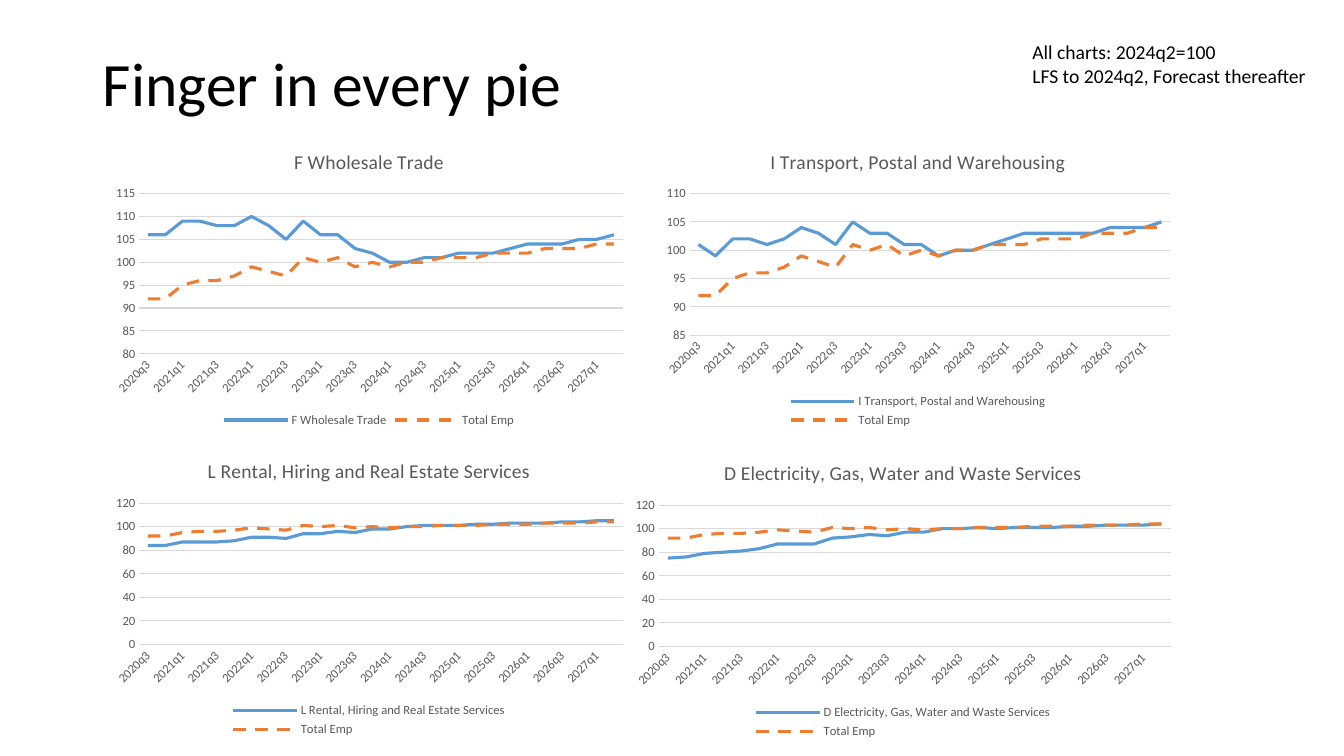
from dataclasses import dataclass

from pptx import Presentation
from pptx.chart.data import CategoryChartData
from pptx.dml.color import RGBColor as RGB
from pptx.enum.chart import XL_CHART_TYPE as ChartType
from pptx.enum.chart import XL_LEGEND_POSITION as LegendPosition
from pptx.enum.chart import XL_TICK_MARK as TickMark
from pptx.enum.dml import MSO_LINE_DASH_STYLE as Dash
from pptx.enum.text import MSO_ANCHOR as Anchor
from pptx.enum.text import PP_ALIGN as Align
from pptx.util import Inches, Pt


@dataclass(frozen=True)
class Theme:
    font: str = "Calibri"
    ink: RGB = RGB(0x00, 0x00, 0x00)
    label: RGB = RGB(0x59, 0x59, 0x59)
    grid: RGB = RGB(0xD9, 0xD9, 0xD9)
    industry: RGB = RGB(0x5B, 0x9B, 0xD5)
    total: RGB = RGB(0xED, 0x7D, 0x31)
    heading_size: Pt = Pt(44)
    note_size: Pt = Pt(14)
    chart_title_size: Pt = Pt(14)
    label_size: Pt = Pt(9)
    series_width: Pt = Pt(2.25)
    grid_width: Pt = Pt(0.75)


theme = Theme()


def set_font(font, size, color):
    font.name = theme.font
    font.size = size
    font.bold = False
    font.color.rgb = color


deck = Presentation()
deck.slide_width = Inches(13.33)
deck.slide_height = Inches(7.5)


def area(left, top, width, height):
    across, down = deck.slide_width / 100, deck.slide_height / 100
    return int(left * across), int(top * down), int(width * across), int(height * down)


slide = deck.slides.add_slide(deck.slide_layouts[5])

heading = slide.shapes.title
heading.left, heading.top, heading.width, heading.height = area(6.9, 5.33, 86.27, 12.27)
heading.text_frame.text = "Finger in every pie"
heading.text_frame.vertical_anchor = Anchor.MIDDLE
heading_line = heading.text_frame.paragraphs[0]
heading_line.alignment = Align.LEFT
heading_line.line_spacing = 0.9
set_font(heading_line.font, theme.heading_size, theme.ink)

note = slide.shapes.add_textbox(*area(76.07, 4.67, 23.63, 7.6)).text_frame
note.word_wrap = True
note.text = "All charts: 2024q2=100\nLFS to 2024q2, Forecast thereafter"
for note_line in note.paragraphs:
    set_font(note_line.font, theme.note_size, theme.ink)

quarters = [f"{2020 + n // 4}q{n % 4 + 1}" for n in range(2, 30)]
total_employment = [92, 92, 95, 96, 96, 97, 99, 98, 97, 101, 100, 101, 99, 100,
                    99, 100, 100, 101, 101, 101, 102, 102, 102, 103, 103, 103, 104, 104]

upper_row, lower_row, row_height = 17.6, 58.53, 39.47
left_column, left_width = 7.8, 39.31

industries = [
    ("D Electricity, Gas, Water and Waste Services",
     (46.44, 58.8, 41.49, row_height), (0, 120, 20),
     [75, 76, 79, 80, 81, 83, 87, 87, 87, 92, 93, 95, 94, 97,
      97, 100, 100, 101, 100, 101, 101, 101, 102, 102, 103, 103, 103, 104]),
    ("F Wholesale Trade",
     (left_column, upper_row, left_width, row_height), (80, 115, 5),
     [106, 106, 109, 109, 108, 108, 110, 108, 105, 109, 106, 106, 103, 102,
      100, 100, 101, 101, 102, 102, 102, 103, 104, 104, 104, 105, 105, 106]),
    ("I Transport, Postal and Warehousing",
     (48.76, upper_row, 39.08, row_height), (85, 110, 5),
     [101, 99, 102, 102, 101, 102, 104, 103, 101, 105, 103, 103, 101, 101,
      99, 100, 100, 101, 102, 103, 103, 103, 103, 103, 104, 104, 104, 105]),
    ("L Rental, Hiring and Real Estate Services",
     (left_column, lower_row, left_width, row_height), (0, 120, 20),
     [84, 84, 87, 87, 87, 88, 91, 91, 90, 94, 94, 96, 95, 98,
      98, 100, 101, 101, 101, 102, 102, 103, 103, 103, 104, 104, 105, 105]),
]

for industry, bounds, (lowest, highest, step), employment in industries:
    index_data = CategoryChartData(number_format="0")
    index_data.categories = quarters
    index_data.add_series(industry, employment)
    index_data.add_series("Total Emp", total_employment)
    chart = slide.shapes.add_chart(ChartType.LINE, *area(*bounds), index_data).chart
    set_font(chart.font, theme.label_size, theme.label)

    chart.has_title = True
    chart.chart_title.include_in_layout = False
    chart.chart_title.text_frame.text = industry
    set_font(chart.chart_title.text_frame.paragraphs[0].font,
             theme.chart_title_size, theme.label)

    chart.has_legend = True
    chart.legend.position = LegendPosition.BOTTOM
    chart.legend.include_in_layout = False
    set_font(chart.legend.font, theme.label_size, theme.label)

    quarter_axis, index_axis = chart.category_axis, chart.value_axis
    for axis in (quarter_axis, index_axis):
        axis.major_tick_mark = TickMark.NONE
        axis.minor_tick_mark = TickMark.NONE
        set_font(axis.tick_labels.font, theme.label_size, theme.label)
    quarter_axis.format.line.color.rgb = theme.grid
    quarter_axis.format.line.width = theme.grid_width
    for label_body in quarter_axis._element.xpath("c:txPr/a:bodyPr"):
        label_body.set("rot", "-2700000")
        label_body.set("vert", "horz")
    index_axis.minimum_scale = lowest
    index_axis.maximum_scale = highest
    index_axis.major_unit = step
    index_axis.format.line.fill.background()
    index_axis.major_gridlines.format.line.color.rgb = theme.grid
    index_axis.major_gridlines.format.line.width = theme.grid_width

    plot = chart.plots[0]
    plot.vary_by_categories = False
    strokes = [(theme.industry, Dash.SOLID), (theme.total, Dash.DASH)]
    for series, (color, dash) in zip(plot.series, strokes):
        series.smooth = False
        series.format.line.color.rgb = color
        series.format.line.width = theme.series_width
        series.format.line.dash_style = dash

deck.save("out.pptx")
